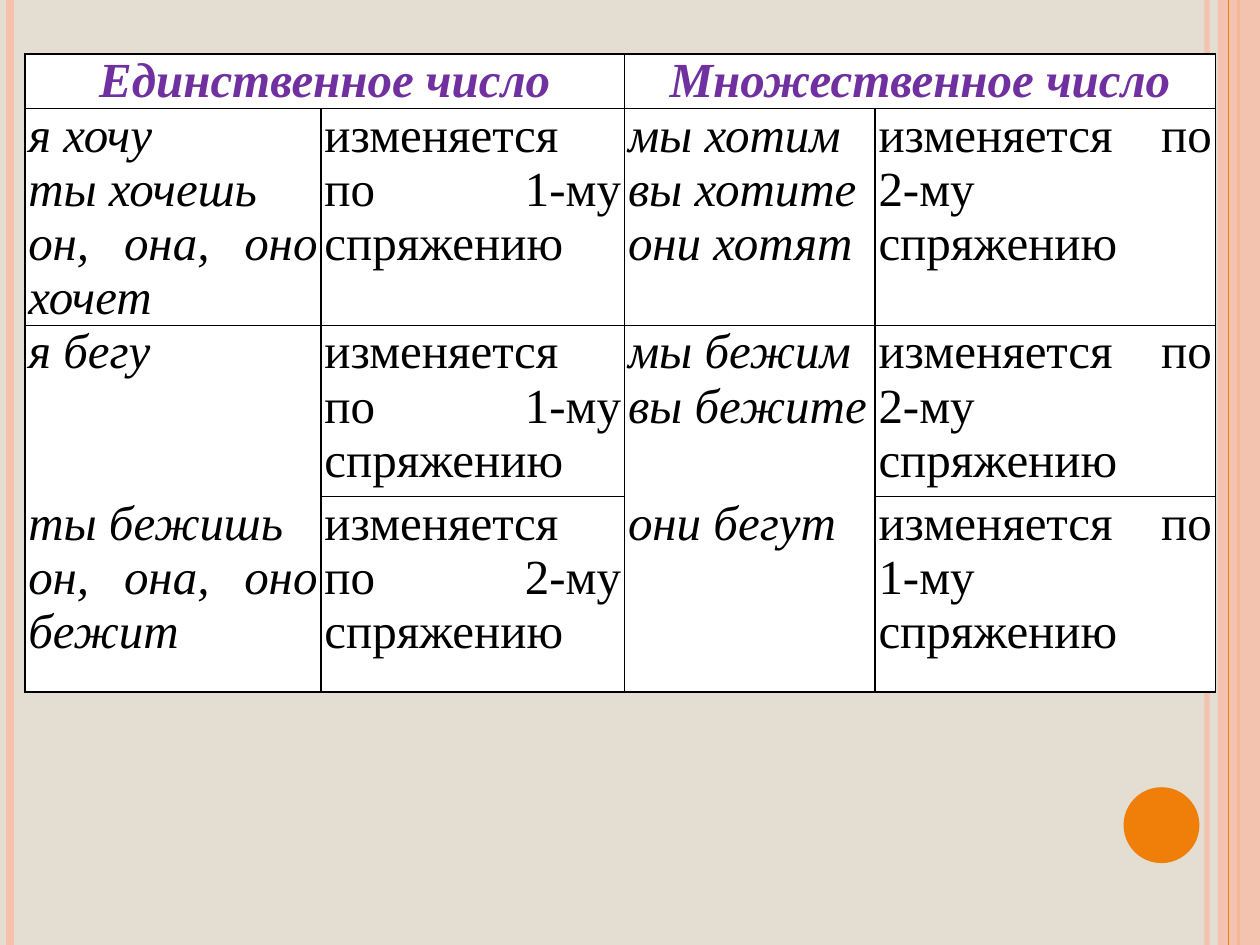
"""Build a slide with a table of mixed-conjugation Russian verbs."""
from lxml import etree
from pptx import Presentation
from pptx.dml.color import RGBColor
from pptx.enum import shapes, text
from pptx.oxml.ns import qn
from pptx.util import Cm, Pt


def paint(fill, colour, opacity=100):
    fill.solid()
    fill.fore_color.rgb = RGBColor.from_string(colour)
    if opacity < 100:
        tint = fill._xPr.find(qn("a:solidFill"))[0]
        etree.SubElement(tint, qn("a:alpha"), val=str(opacity * 1000))


def add_stripe(slide, x, colour, width, opacity=100):
    stripe = slide.shapes.add_connector(
        shapes.MSO_CONNECTOR.STRAIGHT, Cm(x), Cm(0), Cm(x), Cm(19.05))
    stripe.line.width = Pt(width)
    paint(stripe.line.fill, colour, opacity)
    etree.SubElement(stripe._element.spPr, qn("a:effectLst"))


deck = Presentation()
deck.slide_width, deck.slide_height = Cm(25.4), Cm(19.05)
slide = deck.slides.add_slide(deck.slide_layouts[6])
paint(slide.background.fill, "E3DED1")

add_stripe(slide, 24.33, "F6C0AB", 3, 93)
add_stripe(slide, 0.21, "F6C0AB", 4.5)
add_stripe(slide, 24.97, "F07F09", 1.5)
band = slide.shapes.add_shape(
    shapes.MSO_SHAPE.RECTANGLE, Cm(24.55), Cm(0), Cm(0.85), Cm(19.05))
paint(band.fill, "F6C0AB", 87)
add_stripe(slide, 24.77, "F07F09", 0.75)
disc = slide.shapes.add_shape(
    shapes.MSO_SHAPE.OVAL, Cm(22.65), Cm(15.87), Cm(1.53), Cm(1.53))
paint(disc.fill, "F07F09")
for ornament in (band, disc):
    ornament.line.fill.background()
    ornament.shadow.inherit = False

first, second = ("изменяется по 1-му спряжению", "изменяется по 2-му спряжению")
content = [
    ["Единственное число", "", "Множественное число", ""],
    ["я хочу\nты хочешь\nон, она, оно хочет", first,
     "мы хотим\nвы хотите\nони хотят", second],
    ["я бегу", first, "мы бежим\nвы бежите", second],
    ["ты бежишь\nон, она, оно бежит", second, "они бегут", first],
]
widths = [5.97, 6.12, 5.05, 6.86]
heights = [1.07, 4.32, 3.45, 3.94]
indents = [0, -0.08, 0, -0.03]

verbs = slide.shapes.add_table(
    4, 4, Cm(0.5), Cm(1.09), Cm(sum(widths)), Cm(sum(heights))).table
verbs.first_row = verbs.horz_banding = False
for column, width in zip(verbs.columns, widths):
    column.width = Cm(width)
for row, height in zip(verbs.rows, heights):
    row.height = Cm(height)
for c in (0, 2):
    verbs.cell(0, c).merge(verbs.cell(0, c + 1))

for r, entries in enumerate(content):
    for c, entry in enumerate(entries):
        cell = verbs.cell(r, c)
        cell.margin_left = cell.margin_right = Cm(0.07)
        cell.margin_top = cell.margin_bottom = 0
        heading, verb_form = r == 0, c % 2 == 0
        for side in "LRTB":
            edge = etree.SubElement(
                cell._tc.get_or_add_tcPr(), qn(f"a:ln{side}"), w=str(Pt(1)))
            if verb_form and (r, side) in ((2, "B"), (3, "T")):
                etree.SubElement(edge, qn("a:noFill"))
            else:
                ink = etree.SubElement(edge, qn("a:solidFill"))
                etree.SubElement(ink, qn("a:srgbClr"), val="000000")
        paint(cell.fill, "FFFFFF")
        if not entry:
            continue
        for i, line in enumerate(entry.split("\n")):
            frame = cell.text_frame
            paragraph = frame.add_paragraph() if i else frame.paragraphs[0]
            paragraph.alignment = (
                text.PP_ALIGN.CENTER if heading else text.PP_ALIGN.JUSTIFY)
            if indents[c] and not heading:
                paragraph._p.get_or_add_pPr().set("indent", str(Cm(indents[c])))
            run = paragraph.add_run()
            run.text = line
            run.font.name = "Times New Roman"
            run.font.size = Pt(28)
            run.font.bold = heading
            run.font.italic = verb_form
            paint(run.font.fill, "7030A0" if heading else "000000")

deck.save("out.pptx")
